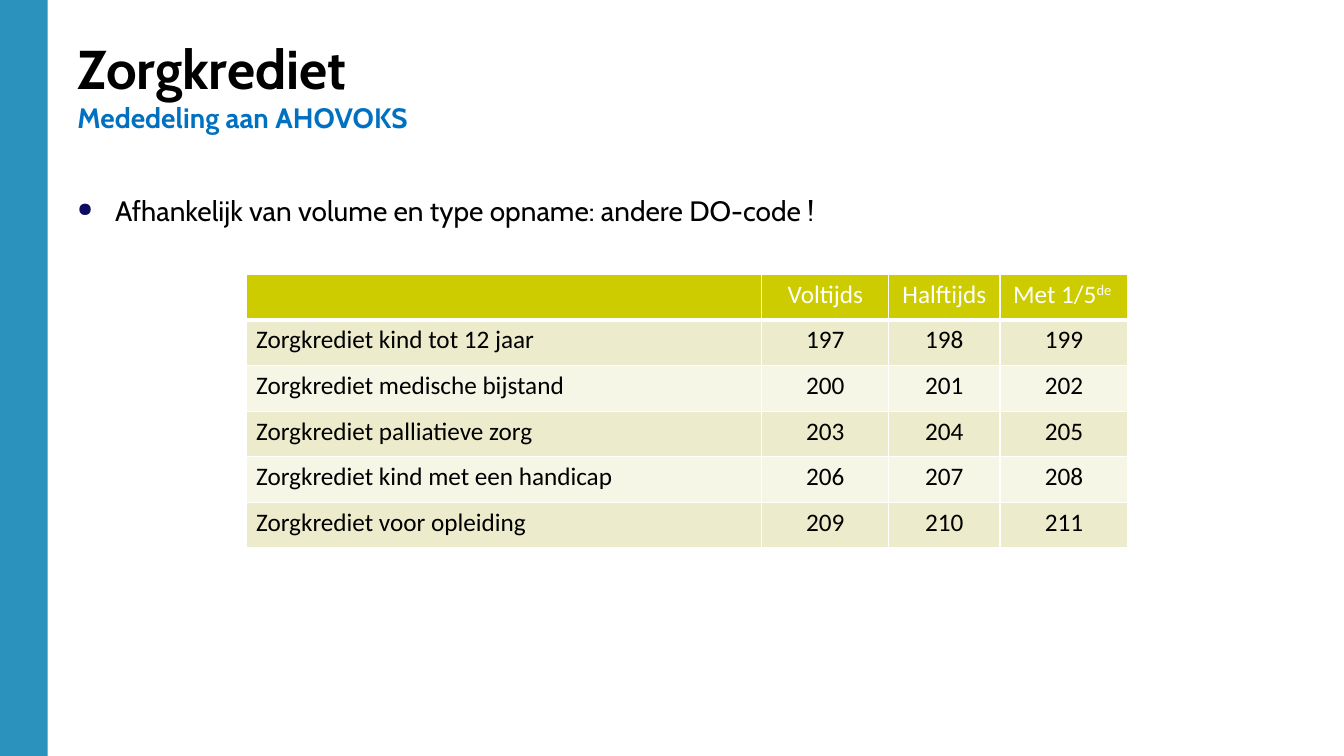
from dataclasses import dataclass

from lxml import etree
from pptx import Presentation
from pptx.dml.color import RGBColor
from pptx.enum import shapes, text
from pptx.oxml import ns
from pptx.util import Cm, Pt


@dataclass(frozen=True)
class Theme:
    """Colours, fonts and type sizes of the slide."""
    bar: str = "2B92BE"
    ink: str = "000000"
    accent: str = "0070C0"
    bullet: str = "0C0C60"
    white: str = "FFFFFF"
    header: str = "CCCC00"
    bands: tuple = ("ECECCC", "F6F6E7")
    heading_font: str = "Cabin"
    table_font: str = "Calibri"
    title_size: int = 39
    body_size: int = 20
    table_size: int = 18


THEME = Theme()
COLUMNS = (13, 3.2, 2.8, 3.23)
HEADINGS = ("", "Voltijds", "Halftijds", "Met 1/5")
LEAVE_TYPES = ("kind tot 12 jaar", "medische bijstand", "palliatieve zorg",
               "kind met een handicap", "voor opleiding")
FIRST_CODE = 197


def add_run(p, words, font, size, color, bold=False):
    """Append a formatted run to a paragraph."""
    r = p.add_run()
    r.text = words
    for name, value in {"name": font, "size": Pt(size), "bold": bold}.items():
        setattr(r.font, name, value)
    r.font.color.rgb = RGBColor.from_string(color)
    return r


def add_text_box(s, box, anchor):
    """Add a wrapping text box and return its first paragraph."""
    tf = s.shapes.add_textbox(*map(Cm, box)).text_frame
    for name, value in {"word_wrap": True, "vertical_anchor": anchor}.items():
        setattr(tf, name, value)
    return tf.paragraphs[0]


def add_side_bar(s, box):
    """Draw the coloured bar along the left edge."""
    sp = s.shapes.add_shape(shapes.MSO_SHAPE.RECTANGLE, *map(Cm, box))
    sp.shadow.inherit = False
    sp.fill.solid()
    sp.fill.fore_color.rgb = RGBColor.from_string(THEME.bar)
    sp.line.fill.background()


def add_title(s, box):
    """Write the title with its subtitle on the next line."""
    p = add_text_box(s, box, text.MSO_ANCHOR.BOTTOM)
    add_run(p, "Zorgkrediet", THEME.heading_font, THEME.title_size, THEME.ink, True)
    p.add_line_break()
    add_run(p, "Mededeling aan AHOVOKS", THEME.heading_font, THEME.body_size,
            THEME.accent, True)


def add_body(s, box):
    """Write the bulleted statement."""
    p = add_text_box(s, box, text.MSO_ANCHOR.TOP)
    p.line_spacing = 0.9
    pPr = p._p.get_or_add_pPr()
    indent = Cm(0.95)
    pPr.set("marL", str(indent))
    pPr.set("indent", str(-indent))
    color = etree.SubElement(pPr, ns.qn("a:buClr"))
    etree.SubElement(color, ns.qn("a:srgbClr"), val=THEME.bullet)
    etree.SubElement(pPr, ns.qn("a:buSzPct"), val="70000")
    etree.SubElement(pPr, ns.qn("a:buChar"), char="●")
    add_run(p, "Afhankelijk van volume en type opname: andere DO-code !",
            THEME.heading_font, THEME.body_size, THEME.ink)


def style_cell(cell, fill, bottom):
    """Give a cell white borders and a solid fill."""
    tcPr = cell._tc.get_or_add_tcPr()
    for side, width in {"L": 1, "R": 1, "T": 1, "B": bottom}.items():
        ln = etree.SubElement(tcPr, ns.qn(f"a:ln{side}"), w=str(Pt(width)))
        solid = etree.SubElement(ln, ns.qn("a:solidFill"))
        etree.SubElement(solid, ns.qn("a:srgbClr"), val=THEME.white)
    cell.fill.solid()
    cell.fill.fore_color.rgb = RGBColor.from_string(fill)


def add_code_table(s, box):
    """Build the table of codes by type and volume of leave."""
    rows = [HEADINGS]
    for i, leave in enumerate(LEAVE_TYPES):
        first = FIRST_CODE + 3 * i
        rows.append((f"Zorgkrediet {leave}", *map(str, range(first, first + 3))))
    table = s.shapes.add_table(len(rows), len(COLUMNS), *map(Cm, box)).table
    for name in ("first_row", "horz_banding"):
        setattr(table, name, False)
    for column, width in zip(table.columns, COLUMNS):
        column.width = Cm(width)
    for i, row in enumerate(rows):
        table.rows[i].height = Cm(box[3] / len(rows))
        fill = THEME.bands[(i - 1) % 2] if i else THEME.header
        color = THEME.ink if i else THEME.white
        for j, words in enumerate(row):
            cell = table.cell(i, j)
            style_cell(cell, fill, 1 if i else 3)
            p = cell.text_frame.paragraphs[0]
            p.alignment = text.PP_ALIGN.CENTER if j else text.PP_ALIGN.LEFT
            if words:
                add_run(p, words, THEME.table_font, THEME.table_size, color)
    p = table.cell(0, len(COLUMNS) - 1).text_frame.paragraphs[0]
    r = add_run(p, "de ", THEME.table_font, THEME.table_size, THEME.white)
    r.font._element.set("baseline", "30000")


def main():
    """Build and save the slide."""
    prs = Presentation()
    prs.slide_width, prs.slide_height = Cm(33.87), Cm(19.05)
    s = prs.slides.add_slide(prs.slide_layouts[6])
    add_side_bar(s, (0, 0, 1.2, 19.05))
    add_title(s, (1.7, 0.33, 31.52, 3.18))
    add_body(s, (1.7, 4.85, 30.48, 12.3))
    add_code_table(s, (6.2, 6.91, sum(COLUMNS), 6.9))
    prs.save("out.pptx")


if __name__ == "__main__":
    main()
